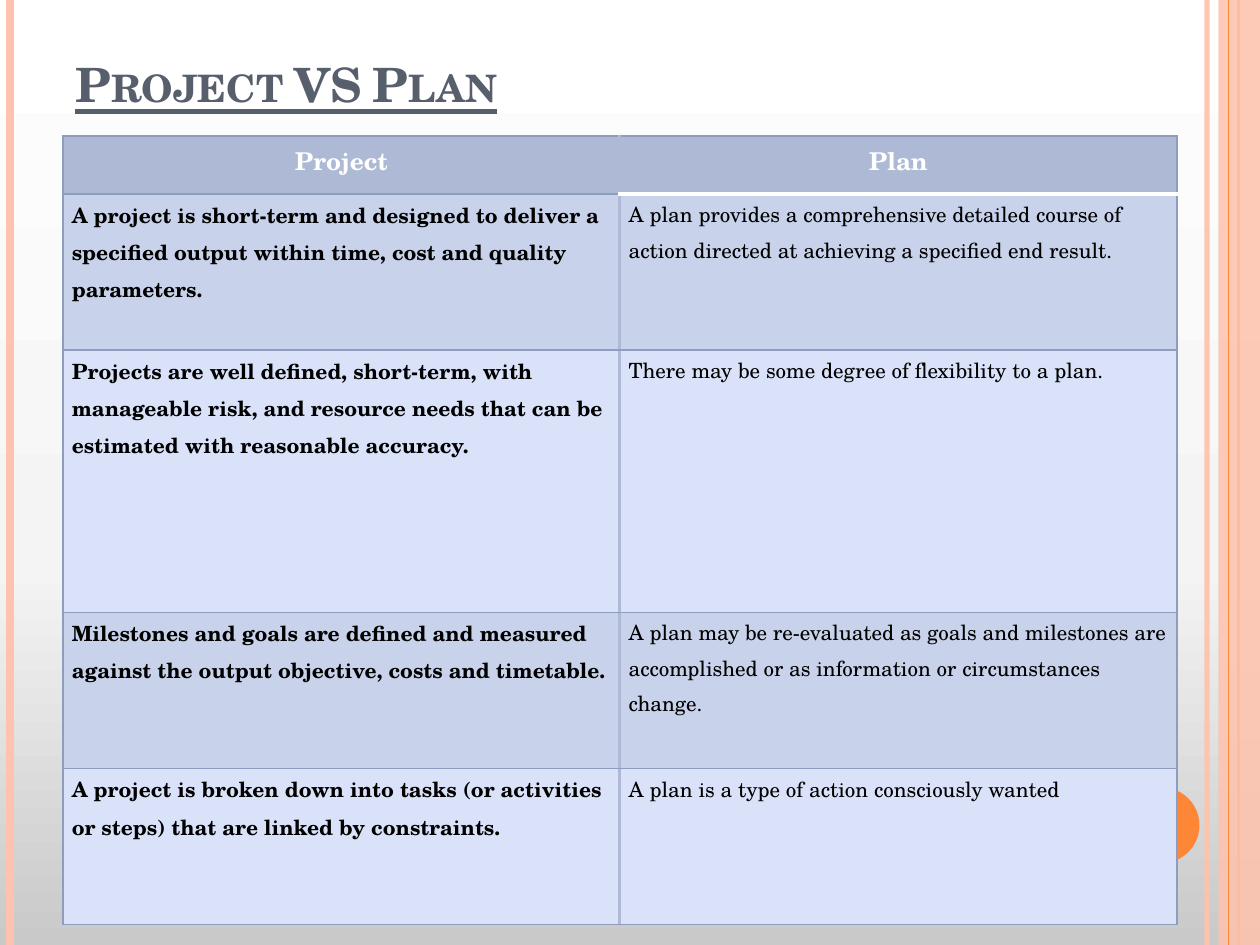
from copy import deepcopy

from lxml import etree
from pptx import Presentation
from pptx.dml.color import RGBColor
from pptx.enum.shapes import MSO_CONNECTOR, MSO_SHAPE
from pptx.enum.text import MSO_ANCHOR, PP_ALIGN
from pptx.oxml.ns import qn
from pptx.util import Inches, Pt

STRAIGHT = MSO_CONNECTOR.STRAIGHT
RECT, OVAL = MSO_SHAPE.RECTANGLE, MSO_SHAPE.OVAL
TOP, BOTTOM = MSO_ANCHOR.TOP, MSO_ANCHOR.BOTTOM
LEFT, CENTER = PP_ALIGN.LEFT, PP_ALIGN.CENTER

FONT = "TeX Gyre Schola"
WIDTH, HEIGHT = 10, 7.5
ORANGE, PEACH, SLATE = "FE8637", "FEC3AE", "575F6D"
HEADER, BAND, PALE, EDGE = "AEBAD5", "C8D2EA", "DAE2F9", "8D9CBF"
WHITE, BLACK = "FFFFFF", "000000"
BACKGROUND = [(0, "C9C9C9"), (0.4, "F4F4F4"), (1, WHITE)]
RULES = [(9.58, PEACH, 3, 93), (0.08, PEACH, 4.5, 100), (9.83, ORANGE, 1.5, 100)]
ROW_HEIGHTS = [0.46, 1.24, 2.08, 1.24, 1.24]
ROWS = [
    ("Project", "Plan"),
    ("A project is short-term and designed to deliver a specified output within time, cost and quality parameters.",
     "A plan provides a comprehensive detailed course of action directed at achieving a specified end result."),
    ("Projects are well defined, short-term, with manageable risk, and resource needs that can be estimated with reasonable accuracy.",
     "There may be some degree of flexibility to a plan."),
    ("Milestones and goals are defined and measured against the output objective, costs and timetable.",
     "A plan may be re-evaluated as goals and milestones are accomplished or as information or circumstances change."),
    ("A project is broken down into tasks (or activities or steps) that are linked by constraints.",
     "A plan is a type of action consciously wanted"),
]


def rgb(color):
    """Turn a hex string into a colour."""
    return RGBColor.from_string(color)


def set_alpha(shape, percent):
    """Make the first colour of a shape partly transparent."""
    clr = shape._element.spPr.find(".//" + qn("a:srgbClr"))
    etree.SubElement(clr, qn("a:alpha")).set("val", str(percent * 1000))


def set_background(s):
    """Fill the slide with a vertical gradient."""
    fill = s.background.fill
    fill.gradient()
    stops = s._element.find(".//" + qn("a:gsLst"))
    stops.append(deepcopy(stops[0]))
    for stop, (position, color) in zip(fill.gradient_stops, BACKGROUND):
        stop.position = position
        stop.color.rgb = rgb(color)
    fill.gradient_angle = 90


def add_rule(s, x, color, width, opacity=100):
    """Draw a full-height vertical line."""
    line = s.shapes.add_connector(STRAIGHT, Inches(x), 0, Inches(x), Inches(HEIGHT))
    line.line.color.rgb = rgb(color)
    line.line.width = Pt(width)
    if opacity < 100:
        set_alpha(line, opacity)
    etree.SubElement(line._element.spPr, qn("a:effectLst"))


def add_block(s, kind, box, color, opacity=100):
    """Add a plain filled shape without outline."""
    sp = s.shapes.add_shape(kind, *map(Inches, box))
    sp.shadow.inherit = False
    sp.fill.solid()
    sp.fill.fore_color.rgb = rgb(color)
    sp.line.fill.background()
    if opacity < 100:
        set_alpha(sp, opacity)


def write(tf, text, size, color, bold=False, align=LEFT, spacing=1.0):
    """Write one formatted paragraph and return its run."""
    p = tf.paragraphs[0]
    p.alignment, p.line_spacing = align, spacing
    r = p.add_run()
    r.text = text
    r.font.name, r.font.size, r.font.bold = FONT, Pt(size), bold
    r.font.color.rgb = rgb(color)
    return r


def add_title(s, text):
    """Add the underlined small-caps title."""
    tf = s.shapes.add_textbox(*map(Inches, (0.5, 0.42, 8.17, 0.92))).text_frame
    tf.word_wrap = True
    tf.vertical_anchor = BOTTOM
    tf.margin_bottom = Inches(0.45)
    r = write(tf, text, 27, SLATE, bold=True)
    r.font.underline = True
    r._r.get_or_add_rPr().set("cap", "small")


def set_borders(cell, **sides):
    """Set cell borders, each side given as (colour, points)."""
    tcPr = cell._tc.get_or_add_tcPr()
    for i, side in enumerate("LRTB"):
        color, width = sides.get(side, (EDGE, 1))
        ln = etree.Element(qn("a:ln" + side), w=str(Pt(width)))
        fill = etree.SubElement(ln, qn("a:solidFill"))
        etree.SubElement(fill, qn("a:srgbClr"), val=color)
        tcPr.insert(i, ln)


def fill_cell(cell, text, row, col):
    """Format one cell by its place in the table."""
    header = row == 0
    cell.margin_left = cell.margin_right = Inches(0.07)
    cell.margin_top = cell.margin_bottom = 0
    cell.vertical_anchor = TOP
    cell.fill.solid()
    cell.fill.fore_color.rgb = rgb(HEADER if header else BAND if row % 2 else PALE)
    write(cell.text_frame, text, 14 if header else 12, WHITE if header else BLACK,
          bold=header or col == 0, align=CENTER if header else LEFT, spacing=1.15)
    sides = {"L" if col else "R": (HEADER, 2)}
    if col and row < 2:
        sides["B" if header else "T"] = (WHITE, 2)
    set_borders(cell, **sides)


def add_comparison(s):
    """Add the two-column comparison table."""
    box = map(Inches, (0.5, 1.08, 8.84, sum(ROW_HEIGHTS)))
    table = s.shapes.add_table(len(ROWS), 2, *box).table
    for i, (height, texts) in enumerate(zip(ROW_HEIGHTS, ROWS)):
        table.rows[i].height = Inches(height)
        for j, text in enumerate(texts):
            fill_cell(table.cell(i, j), text, i, j)


def main():
    """Build and save the slide."""
    prs = Presentation()
    prs.slide_width, prs.slide_height = Inches(WIDTH), Inches(HEIGHT)
    s = prs.slides.add_slide(prs.slide_layouts[6])
    set_background(s)
    for rule in RULES:
        add_rule(s, *rule)
    add_block(s, RECT, (9.67, 0, 0.33, HEIGHT), PEACH, 87)
    add_rule(s, 9.75, ORANGE, 0.75)
    add_block(s, OVAL, (8.92, 6.25, 0.6, 0.6), ORANGE)
    add_title(s, "Project VS Plan")
    add_comparison(s)
    prs.save("out.pptx")


if __name__ == "__main__":
    main()
